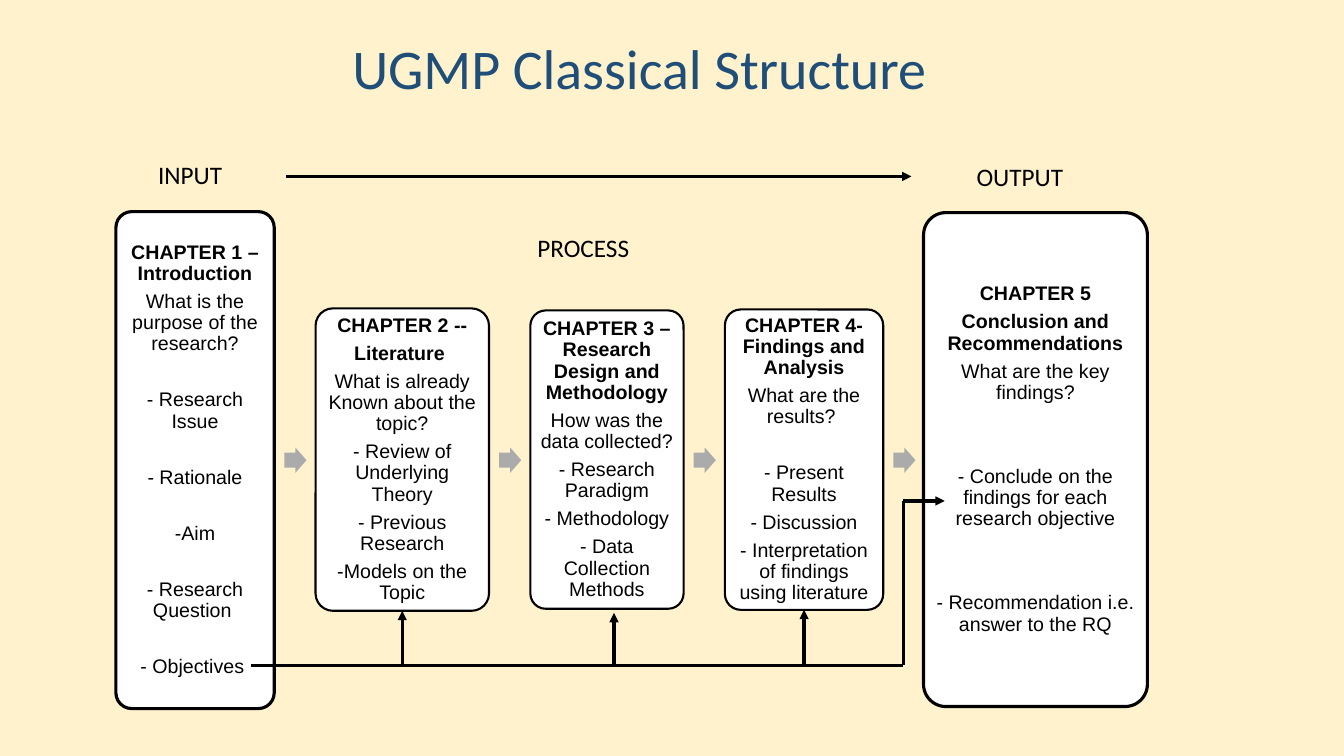
from dataclasses import dataclass

from pptx import Presentation
from pptx.dml.color import RGBColor
from pptx.enum import shapes, text
from pptx.oxml import parse_xml
from pptx.oxml.ns import nsdecls, qn
from pptx.util import Inches, Pt


@dataclass(frozen=True)
class Theme:
    background: str = "FFF2CC"
    heading: str = "1F4E79"
    ink: str = "000000"
    card: str = "FFFFFF"
    step: str = "ABABAB"
    heading_size: int = 40
    label_size: int = 18
    body_size: int = 14
    paragraph_gap: float = 4.9
    blank_gap: int = 20
    heavy: float = 2.25
    light: float = 1.5
    display_font: str = "Calibri"
    body_font: str = "Arial"


THEME = Theme()

TITLE = "UGMP Classical Structure"
LABELS = [("INPUT", 1.14, 1.53), ("OUTPUT", 9.37, 1.55), ("PROCESS", 5.04, 2.26)]

CHAPTERS = [
    {
        "box": (1.15, 2.1, 1.57, 4.93),
        "border": THEME.heavy,
        "heading": ["CHAPTER 1 – Introduction"],
        "question": "What is the purpose of the research?",
        "points": ["- Research Issue", "- Rationale", "-Aim", "- Research Question ", "- Objectives "],
        "blanks": [1, 1, 1, 1, 1],
    },
    {
        "box": (3.13, 3.06, 1.72, 3),
        "border": THEME.light,
        "heading": ["CHAPTER 2 --", "Literature "],
        "question": "What is already Known about the topic?",
        "points": ["- Review of Underlying Theory", "- Previous Research", "-Models on the Topic"],
        "blanks": [0, 0, 0],
    },
    {
        "box": (5.26, 3.08, 1.52, 2.96),
        "border": THEME.light,
        "heading": ["CHAPTER 3 – Research Design and Methodology"],
        "question": "How was the data collected?",
        "points": ["- Research Paradigm", "- Methodology", "- Data Collection Methods"],
        "blanks": [0, 0, 0],
    },
    {
        "box": (7.19, 3.07, 1.57, 2.98),
        "border": THEME.light,
        "heading": ["CHAPTER 4- Findings and Analysis"],
        "question": "What are the results? ",
        "points": ["- Present Results", "- Discussion", "- Interpretation of findings using literature"],
        "blanks": [1, 0, 0],
    },
    {
        "box": (9.16, 2.11, 2.22, 4.9),
        "border": THEME.heavy,
        "heading": ["CHAPTER 5", "Conclusion and Recommendations"],
        "question": "What are the key findings?",
        "points": ["- Conclude on the findings for each research objective", "- Recommendation i.e. answer to the RQ"],
        "blanks": [2, 2],
    },
]

RAIL_Y, RAIL_END = 6.6, 8.96
OUTPUT_Y = 4.97
ROUTES = [
    ((2.84, 1.75), (9.04, 1.75), True),
    ((2.49, RAIL_Y), (RAIL_END, RAIL_Y), False),
    ((RAIL_END, OUTPUT_Y), (RAIL_END, RAIL_Y), False),
    ((RAIL_END, OUTPUT_Y), (9.37, OUTPUT_Y), True),
    ((6.09, RAIL_Y), (6.09, 6.08), True),
]
STEP_GAP, STEP_Y, STEP_SIZE = 0.1, 4.44, (0.22, 0.25)


def color(value):
    return RGBColor.from_string(value)


def write(paragraph, words, size, font, ink=THEME.ink, bold=False):
    paragraph.alignment = text.PP_ALIGN.CENTER
    run = paragraph.add_run()
    run.text = words
    run.font.size = Pt(size)
    run.font.name = font
    run.font.bold = bold
    run.font.color.rgb = color(ink)


def add_block(slide, preset, box, fill):
    block = slide.shapes.add_shape(preset, *map(Inches, box))
    block.shadow.inherit = False
    block.fill.solid()
    block.fill.fore_color.rgb = color(fill)
    return block


def add_chapter(slide, chapter):
    card = add_block(slide, shapes.MSO_SHAPE.ROUNDED_RECTANGLE, chapter["box"], THEME.card)
    card.adjustments[0] = 0.1
    card.line.color.rgb = color(THEME.ink)
    card.line.width = Pt(chapter["border"])
    frame = card.text_frame
    frame.word_wrap = True
    frame.vertical_anchor = text.MSO_ANCHOR.MIDDLE
    frame.margin_left = frame.margin_right = Inches(0.04)
    frame.margin_top = frame.margin_bottom = Inches(0.06)
    entries = [(words, True, 0) for words in chapter["heading"]]
    entries.append((chapter["question"], False, 0))
    entries += [(words, False, blanks) for words, blanks in zip(chapter["points"], chapter["blanks"])]
    for index, (words, bold, blanks) in enumerate(entries):
        paragraph = frame.add_paragraph() if index else frame.paragraphs[0]
        paragraph.line_spacing = 0.9
        if blanks:
            paragraph.space_before = Pt(blanks * THEME.blank_gap)
        paragraph.space_after = Pt(THEME.paragraph_gap)
        write(paragraph, words, THEME.body_size, THEME.body_font, bold=bold)
    return card


def add_step(slide, box):
    left = box[0] + box[2] + STEP_GAP
    step = add_block(slide, shapes.MSO_SHAPE.RIGHT_ARROW, (left, STEP_Y, *STEP_SIZE), THEME.step)
    step.adjustments[0] = 0.6
    step.line.fill.background()


def add_route(slide, start, end, arrow):
    route = slide.shapes.add_connector(shapes.MSO_CONNECTOR.STRAIGHT, *start, *end)
    route.line.color.rgb = color(THEME.ink)
    route.line.width = Pt(THEME.heavy)
    properties = route.element.spPr
    if arrow:
        properties.find(qn("a:ln")).append(parse_xml(f'<a:tailEnd {nsdecls("a")} type="triangle"/>'))
    properties.append(parse_xml(f'<a:effectLst {nsdecls("a")}/>'))
    return route


def add_label(slide, words, left, top):
    label = slide.shapes.add_textbox(*map(Inches, (left, top, 1.49, 0.4)))
    label.text_frame.word_wrap = True
    write(label.text_frame.paragraphs[0], words, THEME.label_size, THEME.display_font)


def main():
    deck = Presentation()
    deck.slide_width, deck.slide_height = Inches(13.33), Inches(7.5)
    slide = deck.slides.add_slide(deck.slide_layouts[5])
    slide.background.fill.solid()
    slide.background.fill.fore_color.rgb = color(THEME.background)

    title = slide.shapes.title
    title.left, title.top, title.width, title.height = map(Inches, (0.59, 0.31, 11.5, 0.8))
    title.text_frame.vertical_anchor = text.MSO_ANCHOR.MIDDLE
    heading = title.text_frame.paragraphs[0]
    heading.line_spacing = 0.9
    write(heading, TITLE, THEME.heading_size, THEME.display_font, THEME.heading)

    cards = [add_chapter(slide, chapter) for chapter in CHAPTERS]
    for chapter in CHAPTERS[:-1]:
        add_step(slide, chapter["box"])
    for label in LABELS:
        add_label(slide, *label)
    for start, end, arrow in ROUTES:
        add_route(slide, map(Inches, start), map(Inches, end), arrow)

    literature, findings = cards[1], cards[3]
    for card in (literature, findings):
        center = card.left + card.width // 2
        riser = add_route(slide, (center, Inches(RAIL_Y)), (center, card.top + card.height), True)
        riser.end_connect(card, 2)

    deck.save("out.pptx")


if __name__ == "__main__":
    main()
